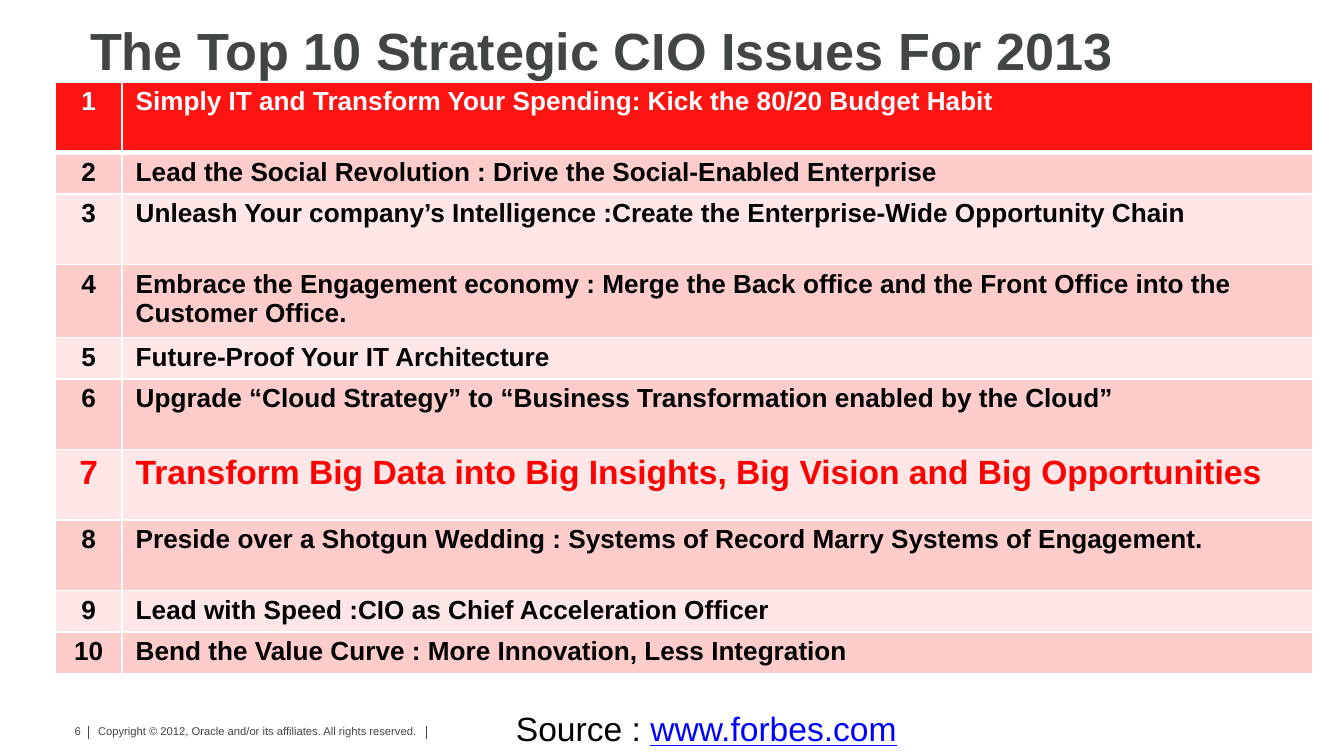
from lxml.etree import SubElement
from pptx import Presentation
from pptx.dml.color import RGBColor
from pptx.enum.shapes import MSO_CONNECTOR
from pptx.enum.text import MSO_ANCHOR, PP_ALIGN
from pptx.oxml import parse_xml
from pptx.oxml.ns import nsdecls, qn
from pptx.util import Inches, Pt

TITLE = "The Top 10 Strategic CIO Issues For 2013"
ISSUES = [
    "Simply IT and Transform Your Spending: Kick the 80/20 Budget Habit",
    "Lead the Social Revolution : Drive the Social-Enabled Enterprise",
    "Unleash Your company’s Intelligence :Create the Enterprise-Wide Opportunity Chain",
    "Embrace the Engagement economy : Merge the Back office and the Front Office into the Customer Office.",
    "Future-Proof Your IT Architecture",
    "Upgrade “Cloud Strategy” to “Business Transformation enabled by the Cloud”",
    "Transform Big Data into Big Insights, Big Vision and Big Opportunities",
    "Preside over a Shotgun Wedding : Systems of Record Marry Systems of Engagement.",
    "Lead with Speed :CIO as Chief Acceleration Officer",
    "Bend the Value Curve : More Innovation, Less Integration",
]
SHORT_ROWS = {2, 5, 9, 10}
HIGHLIGHT = 7
COPYRIGHT = "Copyright © 2012, Oracle and/or its affiliates. All rights reserved."
PAGE = "6"
SOURCE = ("Source : ", "www.forbes.com")

SHORT_HEIGHT = Inches(0.3)
TALL_HEIGHT = Inches(2.1) // 4
CELL_MARGIN = Inches(0.15) // 4

GREY = RGBColor(0x42, 0x45, 0x45)
WHITE = RGBColor(0xFF, 0xFF, 0xFF)
BLACK = RGBColor(0, 0, 0)
RED = RGBColor(0xFF, 0, 0)
BLUE = RGBColor(0, 0, 0xFF)
HEADER = RGBColor(0xFF, 0x14, 0x14)
BANDS = (RGBColor(0xFF, 0xE7, 0xE7), RGBColor(0xFF, 0xCC, 0xCC))


def style(r, size, color, bold=False):
    r.font.name = "Arial"
    r.font.size = Pt(size)
    r.font.bold = bold
    r.font.color.rgb = color


def set_margins(tf, x, y):
    tf.margin_left = tf.margin_right = x
    tf.margin_top = tf.margin_bottom = y


def add_text(s, box, runs, size, margins=(0.1, 0.05), wrap=True, align=PP_ALIGN.LEFT):
    tf = s.shapes.add_textbox(*map(Inches, box)).text_frame
    tf.word_wrap = wrap
    set_margins(tf, *map(Inches, margins))
    p = tf.paragraphs[0]
    p.alignment = align
    for text, color in runs:
        r = p.add_run()
        r.text = text
        style(r, size, color)
    return p


def add_divider(s, x):
    line = s.shapes.add_connector(
        MSO_CONNECTOR.STRAIGHT, Inches(x), Inches(5.4), Inches(x), Inches(5.5))
    line.line.color.rgb = GREY
    line.line.width = Pt(0.5)
    SubElement(line._element.spPr, qn("a:effectLst"))


def set_borders(cell, top, bottom):
    tc_pr = cell._tc.get_or_add_tcPr()
    widths = {"lnL": 1, "lnR": 1, "lnT": top, "lnB": bottom}
    for i, (tag, width) in enumerate(widths.items()):
        tc_pr.insert(i, parse_xml(
            f'<a:{tag} {nsdecls("a")} w="{Pt(width)}"><a:solidFill>'
            f'<a:srgbClr val="{WHITE}"/></a:solidFill></a:{tag}>'))


def add_issues(s):
    heights = [SHORT_HEIGHT if n in SHORT_ROWS else TALL_HEIGHT
               for n in range(1, len(ISSUES) + 1)]
    table = s.shapes.add_table(
        len(ISSUES), 2, Inches(0.41), Inches(0.61), Inches(9.36), sum(heights)).table
    for column, width in zip(table.columns, (0.5, 8.86)):
        column.width = Inches(width)
    for n, (issue, height) in enumerate(zip(ISSUES, heights), 1):
        row = table.rows[n - 1]
        row.height = height
        fill = HEADER if n == 1 else BANDS[(n + 1) % 2]
        color = WHITE if n == 1 else RED if n == HIGHLIGHT else BLACK
        for cell, text, align in zip(row.cells, (str(n), issue), (PP_ALIGN.CENTER, PP_ALIGN.LEFT)):
            set_margins(cell, Inches(0.1), CELL_MARGIN)
            cell.fill.solid()
            cell.fill.fore_color.rgb = fill
            cell.text_frame.text = text
            p = cell.text_frame.paragraphs[0]
            p.alignment = align
            style(p.runs[0], 18 if n == HIGHLIGHT else 14, color, True)
            set_borders(cell, 3 if n == 2 else 1, 3 if n == 1 else 1)


def add_title(s):
    sp = s.shapes.title
    sp.left, sp.top, sp.width, sp.height = map(Inches, (0.67, 0.08, 8.5, 0.53))
    tf = sp.text_frame
    tf.text = TITLE
    tf.word_wrap = True
    tf.vertical_anchor = MSO_ANCHOR.BOTTOM
    set_margins(tf, 0, 0)
    p = tf.paragraphs[0]
    p.alignment = PP_ALIGN.LEFT
    p.line_spacing = 0.9
    style(p.runs[0], 28, GREY, True)


def main():
    prs = Presentation()
    prs.slide_width = Inches(10)
    prs.slide_height = prs.slide_width * 9 // 16
    s = prs.slides.add_slide(prs.slide_layouts[5])
    add_text(s, (0.69, 5.37, 2.74, 0.24), [(COPYRIGHT, GREY)], 6, (0.04, 0.02))
    for x in (0.66, 3.17):
        add_divider(s, x)
    add_text(s, (0.39, 5.34, 0.31, 0.2), [(PAGE, GREY)], 6, wrap=False, align=PP_ALIGN.RIGHT)
    add_title(s)
    add_issues(s)
    p = add_text(s, (3.74, 5.22, 5.39, 0.4), zip(SOURCE, (BLACK, BLUE)), 18)
    p.runs[1].font.underline = True
    prs.save("out.pptx")


if __name__ == "__main__":
    main()
